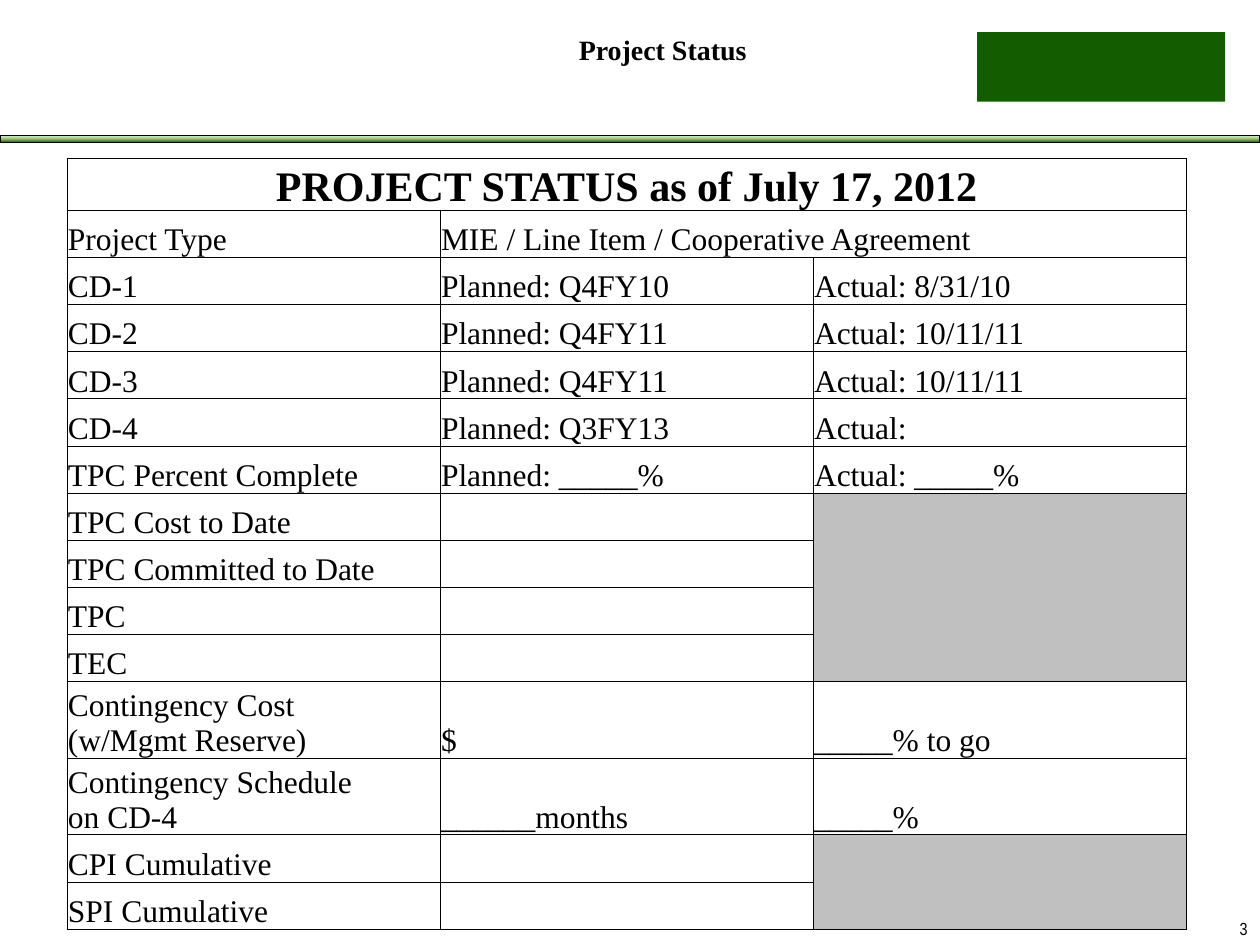
from copy import deepcopy
from pptx import Presentation
from pptx.dml.color import RGBColor
from pptx.enum.shapes import MSO_SHAPE
from pptx.enum.text import MSO_ANCHOR, PP_ALIGN
from pptx.oxml import parse_xml
from pptx.oxml.ns import nsdecls, qn
from pptx.util import Cm, Pt

RECT = MSO_SHAPE.RECTANGLE
TOP, BOTTOM = MSO_ANCHOR.TOP, MSO_ANCHOR.BOTTOM
LEFT, MID, RIGHT = PP_ALIGN.LEFT, PP_ALIGN.CENTER, PP_ALIGN.RIGHT
SERIF = "Times New Roman"


def tint(code):
    return RGBColor.from_string(code)


def write(para, text, size, face=SERIF, bold=False, align=LEFT):
    para.alignment = align
    run = para.add_run()
    run.text = text
    run.font.size = Pt(size)
    run.font.name = face
    run.font.bold = bold
    run.font.color.rgb = tint("000000")


deck = Presentation()
deck.slide_width, deck.slide_height = Cm(25.4), Cm(19.05)
slide = deck.slides.add_slide(deck.slide_layouts[5])
shapes = slide.shapes

bar = shapes.add_shape(RECT, 0, Cm(2.74), Cm(25.4), Cm(0.13))
bar.shadow.inherit = False
bar.line.color.rgb = tint("000000")
bar.line.width = Pt(0.5)
bar.fill.gradient()
bar.fill.gradient_angle = 270
stops = bar.element.spPr.find(".//" + qn("a:gsLst"))
stops.append(deepcopy(stops[0]))
shades = [(0, "DDEBCF"), (0.5, "9CB86E"), (1, "156B13")]
for stop, (place, code) in zip(bar.fill.gradient_stops, shades):
    stop.position = place
    stop.color.rgb = tint(code)

title = shapes.title
title.left, title.top, title.width, title.height = Cm(7.44), Cm(0.61), Cm(11.84), Cm(2.46)
frame = title.text_frame
frame.vertical_anchor = TOP
frame.margin_top = Cm(0.04)
write(frame.paragraphs[0], "Project Status", 16, bold=True, align=MID)

page = shapes.add_textbox(Cm(24.36), Cm(18.39), Cm(1.04), Cm(0.66)).text_frame
page.word_wrap = True
write(page.paragraphs[0], "3", 10, "Arial Narrow", align=RIGHT)

block = shapes.add_shape(RECT, Cm(19.7), Cm(0.65), Cm(5), Cm(1.4))
block.shadow.inherit = False
block.fill.solid()
block.fill.fore_color.rgb = tint("135C00")
block.line.fill.background()

rows = [
    ["PROJECT STATUS as of July 17, 2012", "", ""],
    ["Project Type", "MIE / Line Item / Cooperative Agreement", ""],
    ["CD-1", "Planned: Q4FY10", "Actual: 8/31/10"],
    ["CD-2", "Planned: Q4FY11", "Actual: 10/11/11"],
    ["CD-3", "Planned: Q4FY11", "Actual: 10/11/11"],
    ["CD-4", "Planned: Q3FY13", "Actual:"],
    ["TPC Percent Complete", "Planned: _____%", "Actual: _____%"],
    ["TPC Cost to Date", "", ""],
    ["TPC Committed to Date", "", ""],
    ["TPC", "", ""],
    ["TEC", "", ""],
    ["Contingency Cost\n(w/Mgmt Reserve)", "$", "_____% to go"],
    ["Contingency Schedule\non CD-4", "______months", "_____%"],
    ["CPI Cumulative", "", ""],
    ["SPI Cumulative", "", ""],
]
merges = [(0, 0, 0, 2), (1, 1, 1, 2), (7, 2, 10, 2), (13, 2, 14, 2)]
gray = {7, 8, 9, 10, 13, 14}

table = shapes.add_table(len(rows), 3, Cm(1.35), Cm(3.2), Cm(22.56), Cm(15.52)).table
table.first_row = table.horz_banding = False
for col in table.columns:
    col.width = Cm(7.52)
for r, texts in enumerate(rows):
    tall = "\n" in texts[0]
    table.rows[r].height = Cm(1.04 if r == 0 else 1.54 if tall else 0.95)
    for c, text in enumerate(texts):
        cell = table.cell(r, c)
        cell.vertical_anchor = BOTTOM
        cell.margin_left = cell.margin_right = cell.margin_top = Cm(0.02)
        cell.margin_bottom = 0
        cell.fill.solid()
        cell.fill.fore_color.rgb = tint("C0C0C0" if c == 2 and r in gray else "FFFFFF")
        props = cell._tc.get_or_add_tcPr()
        for n, side in enumerate("LRTB"):
            props.insert(n, parse_xml(
                f'<a:ln{side} {nsdecls("a")} w="6350"><a:solidFill>'
                f'<a:srgbClr val="000000"/></a:solidFill></a:ln{side}>'))
        frame = cell.text_frame
        for n, line in enumerate(text.split("\n")):
            para = frame.add_paragraph() if n else frame.paragraphs[0]
            if not line:
                para.font.size = Pt(18)
            elif r == 0:
                write(para, line, 24, bold=True, align=MID)
            else:
                write(para, line, 18)
for top, left, low, right in merges:
    table.cell(top, left).merge(table.cell(low, right))

deck.save("out.pptx")
